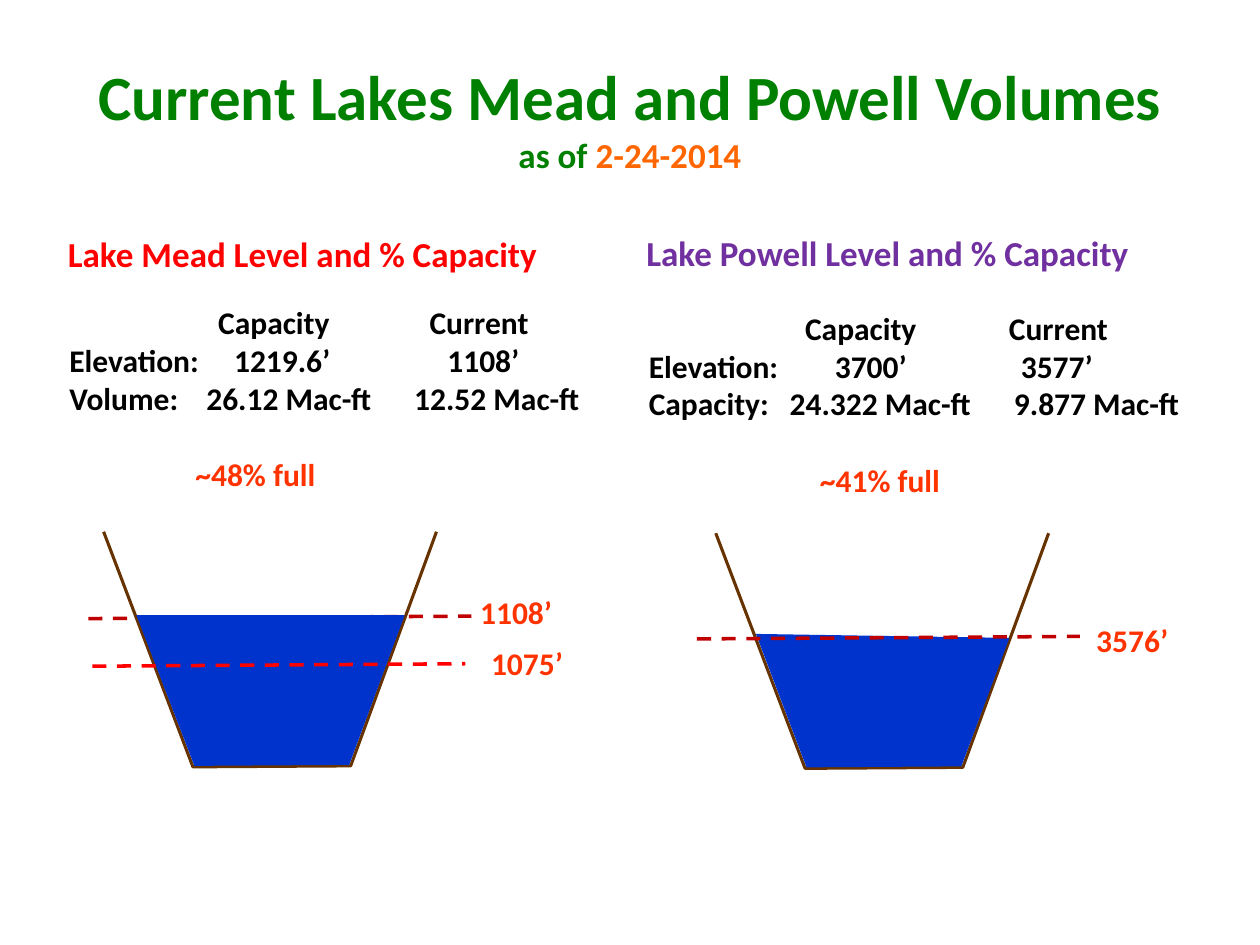
from dataclasses import dataclass

from lxml import etree
from pptx import Presentation, util as u
from pptx.dml.color import RGBColor
from pptx.enum import dml, shapes, text
from pptx.oxml import ns


@dataclass(frozen=True)
class Theme:
    face: str = "Calibri"
    title: int = 36
    head: int = 20
    body: int = 18
    green: str = "008000"
    orange: str = "FF6600"
    red: str = "FF0000"
    purple: str = "7030A0"
    black: str = "000000"
    mark: str = "FF3300"
    level: str = "C00000"
    rim: str = "663300"
    water: str = "0033CC"


T = Theme()
RIM = [(0, 0), (1.8, 4.74), (4.98, 4.72), (6.71, 0)]
BED = [(4.95, 4.7), (1.83, 4.72)]


def style(font, size, hue):
    font.name, font.size, font.bold = T.face, u.Pt(size), True
    font.color.rgb = RGBColor.from_string(hue)


def add_text(slide, x, y, w, h, wrap=True):
    frame = slide.shapes.add_textbox(u.Cm(x), u.Cm(y), u.Cm(w), u.Cm(h)).text_frame
    frame.word_wrap = wrap
    return frame


def add_label(slide, x, y, w, h, words, size, hue, wrap=True):
    para = add_text(slide, x, y, w, h, wrap).paragraphs[0]
    para.text = words
    style(para.font, size, hue)


def set_tabs(para, stops):
    tabs = etree.SubElement(para._p.get_or_add_pPr(), ns.qn("a:tabLst"))
    for stop in stops:
        etree.SubElement(tabs, ns.qn("a:tab"), pos=str(u.Cm(stop)), algn="l")


def add_facts(slide, x, y, w, h, rows):
    frame = add_text(slide, x, y, w, h)
    for i, (words, stops) in enumerate(rows):
        para = frame.paragraphs[0] if i == 0 else frame.add_paragraph()
        para.text = words
        set_tabs(para, stops)
        last = i == len(rows) - 1
        if last:
            para.space_before = u.Pt(22)
        style(para.font, T.body, T.mark if last else T.black)


def add_level(slide, x, y, start, end, hue):
    line = slide.shapes.add_connector(
        shapes.MSO_CONNECTOR.STRAIGHT,
        u.Cm(x + start[0]), u.Cm(y + start[1]), u.Cm(x + end[0]), u.Cm(y + end[1]))
    line.line.color.rgb = RGBColor.from_string(hue)
    line.line.width = u.Pt(2)
    line.line.dash_style = dml.MSO_LINE.DASH
    etree.SubElement(line._element.spPr, ns.qn("a:effectLst"))


def add_outline(group, x, y, points, close):
    spots = [(u.Cm(x + a), u.Cm(y + b)) for a, b in points]
    pen = group.shapes.build_freeform(*spots[0])
    pen.add_line_segments(spots[1:], close=close)
    shape = pen.convert_to_shape()
    shape.shadow.inherit = False
    return shape


def add_basin(slide, x, y, top):
    group = slide.shapes.add_group_shape()
    rim = add_outline(group, x, y, RIM, False)
    rim.fill.background()
    rim.line.color.rgb = RGBColor.from_string(T.rim)
    rim.line.width = u.Pt(1.75)
    water = add_outline(group, x, y, top + BED, True)
    water.fill.solid()
    water.fill.fore_color.rgb = RGBColor.from_string(T.water)
    water.line.fill.background()


def add_title(slide, x, y, w, h):
    frame = add_text(slide, x, y, w, h)
    frame.vertical_anchor = text.MSO_ANCHOR.MIDDLE
    para = frame.paragraphs[0]
    para.alignment = text.PP_ALIGN.CENTER
    parts = [("Current Lakes Mead and Powell Volumes", T.title, T.green),
             ("as of ", T.head, T.green), ("2-24-2014", T.head, T.orange)]
    for i, (words, size, hue) in enumerate(parts):
        if i == 1:
            para.add_line_break()
        run = para.add_run()
        run.text = words
        style(run.font, size, hue)


def add_lake(slide, x, y, w, lake):
    for start, end, hue in lake["behind"]:
        add_level(slide, x, y, start, end, hue)
    add_label(slide, x, y, w, 1.12, lake["name"], T.head, lake["hue"])
    left, top, wide, high = lake["facts"]
    add_facts(slide, x + left, y + top, wide, high, lake["rows"])
    left, top = lake["basin"]
    add_basin(slide, x + left, y + top, lake["water"])
    for start, end, hue in lake["front"]:
        add_level(slide, x, y, start, end, hue)
    for left, top, words in lake["labels"]:
        add_label(slide, x + left, y + top, 1.98, 1.02, words, T.body, T.mark, False)


MEAD = {
    "name": "Lake Mead Level and % Capacity",
    "hue": T.red,
    "facts": (0.03, 1.42, 11.38, 4.11),
    "rows": [("\tCapacity\tCurrent", (3, 7.26)),
             ("Elevation:\t1219.6’\t1108’", (3.32, 7.62)),
             ("Volume:\t26.12 Mac-ft\t12.52 Mac-ft", (2.76, 6.95)),
             ("\t~48% full", (2.54,))],
    "basin": (0.97, 6.15),
    "water": [(0.66, 1.68), (6.07, 1.68)],
    "behind": [((0.66, 7.9), (8.38, 7.85), T.level)],
    "front": [((0.74, 8.86), (8.26, 8.81), T.red)],
    "labels": [(8.53, 8.28, "1075’"), (8.31, 7.26, "1108’")],
}
POWELL = {
    "name": "Lake Powell Level and % Capacity",
    "hue": T.purple,
    "facts": (0.05, 1.55, 12.57, 4.88),
    "rows": [("\tCapacity\tCurrent", (3.15, 7.26)),
             ("Elevation:\t3700’\t3577’", (3.75, 7.5)),
             ("Capacity:\t24.322 Mac-ft\t9.877 Mac-ft", (2.84, 7.36)),
             ("\t~41% full", (3.45,))],
    "basin": (1.65, 6.2),
    "water": [(0.81, 2.03), (5.92, 2.11)],
    "behind": [],
    "front": [((1.27, 8.33), (8.99, 8.28), T.level)],
    "labels": [(9.07, 7.85, "3576’")],
}


def main():
    deck = Presentation()
    deck.slide_width, deck.slide_height = u.Cm(25.4), u.Cm(19.05)
    slide = deck.slides.add_slide(deck.slide_layouts[6])
    add_title(slide, 1.27, 0.76, 22.86, 3.18)
    add_lake(slide, 1.12, 4.57, 10.95, MEAD)
    add_lake(slide, 12.78, 4.55, 11.28, POWELL)
    deck.save("out.pptx")


if __name__ == "__main__":
    main()
